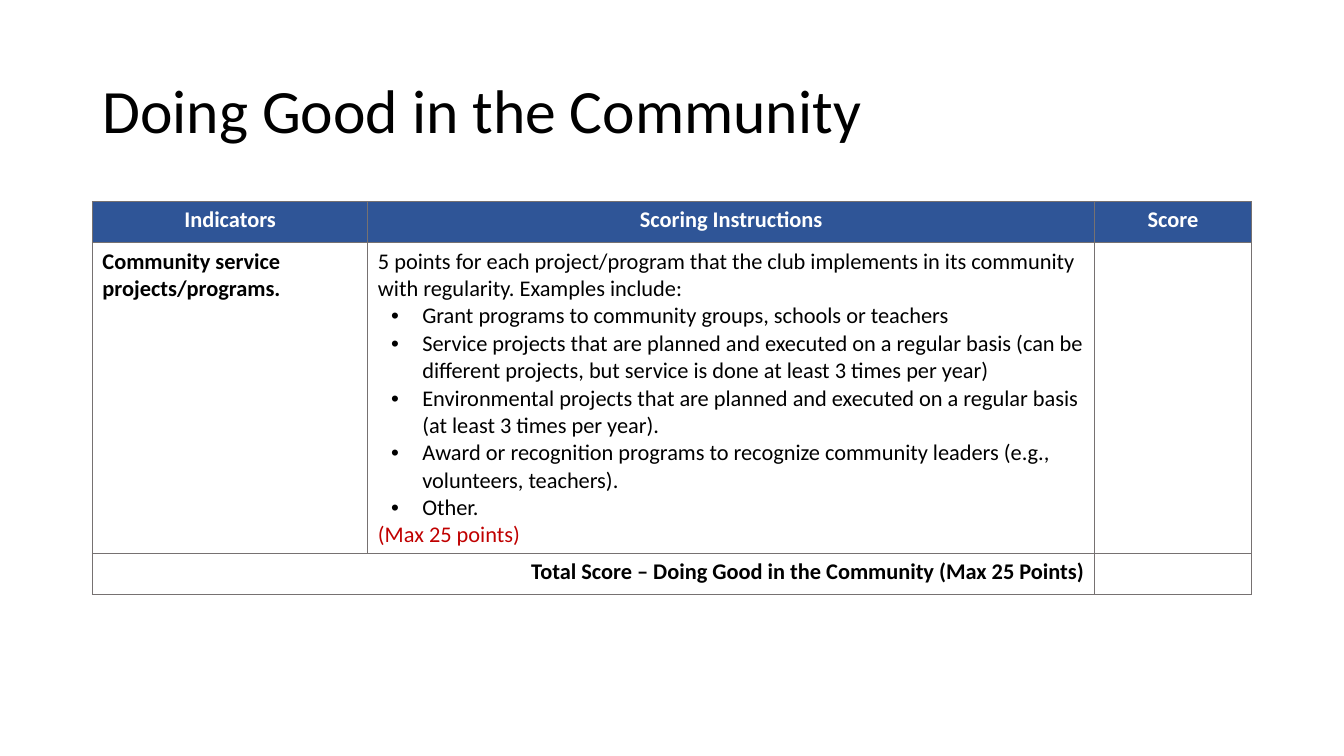
from lxml import etree
from pptx import Presentation
from pptx.dml.color import RGBColor
from pptx.enum.text import MSO_ANCHOR, PP_ALIGN
from pptx.oxml.ns import qn
from pptx.util import Inches, Pt

LEFT, CENTER, RIGHT = PP_ALIGN.LEFT, PP_ALIGN.CENTER, PP_ALIGN.RIGHT
MIDDLE = MSO_ANCHOR.MIDDLE
COLORS = {"text": "000000", "header": "2F5597", "header_text": "FFFFFF",
          "border": "767171", "limit": "C00000"}
WIDTH, HEIGHT = 13.33, 7.5
GRID_COLUMNS, GRID_ROWS = 160, 90

HEADINGS = ["Indicators", "Scoring Instructions", "Score"]
INTRODUCTION = ("5 points for each project/program that the club implements "
                "in its community with regularity. Examples include:")
EXAMPLES = [
    "Grant programs to community groups, schools or teachers",
    "Service projects that are planned and executed on a regular basis "
    "(can be different projects, but service is done at least 3 times per year)",
    "Environmental projects that are planned and executed on a regular basis "
    "(at least 3 times per year).",
    "Award or recognition programs to recognize community leaders "
    "(e.g., volunteers, teachers).",
    "Other.",
]


class SlideBuilder:
    """Holds the style and the current slide."""

    def __init__(self, presentation):
        self.font = "Calibri"
        self.slide = presentation.slides.add_slide(presentation.slide_layouts[6])

    def across(self, columns):
        return Inches(WIDTH * columns / GRID_COLUMNS)

    def down(self, rows):
        return Inches(HEIGHT * rows / GRID_ROWS)

    def set_text(self, paragraph, text, size=16, color="text", bold=False, align=LEFT):
        paragraph.text = text
        paragraph.alignment = align
        for run in paragraph.runs:
            run.font.name = self.font
            run.font.size = Pt(size)
            run.font.bold = bold
            run.font.color.rgb = RGBColor.from_string(COLORS[color])

    def title(self, text, left, top, width, height):
        shape = self.slide.shapes.add_textbox(
            self.across(left), self.down(top), self.across(width), self.down(height))
        frame = shape.text_frame
        frame.word_wrap = True
        frame.vertical_anchor = MIDDLE
        self.set_text(frame.paragraphs[0], text, size=44)
        frame.paragraphs[0].line_spacing = 0.9

    def table(self, left, top, widths, heights):
        shape = self.slide.shapes.add_table(
            len(heights), len(widths), self.across(left), self.down(top),
            self.across(sum(widths)), self.down(sum(heights)))
        table = shape.table
        for column, width in zip(table.columns, widths):
            column.width = self.across(width)
        for row, height in zip(table.rows, heights):
            row.height = self.down(height)
        for cell in table.iter_cells():
            cell.fill.background()
            self.border(cell)
        return table

    def border(self, cell):
        properties = cell._tc.get_or_add_tcPr()
        for index, side in enumerate(("lnL", "lnR", "lnT", "lnB")):
            line = etree.Element(qn(f"a:{side}"), w=str(Pt(1)))
            fill = etree.SubElement(line, qn("a:solidFill"))
            etree.SubElement(fill, qn("a:srgbClr"), val=COLORS["border"])
            properties.insert(index, line)

    def bullet(self, paragraph):
        properties = paragraph._p.get_or_add_pPr()
        properties.set("marL", str(Inches(0.44)))
        properties.set("indent", str(Inches(-0.31)))
        etree.SubElement(properties, qn("a:buFont"), typeface="Arial")
        etree.SubElement(properties, qn("a:buChar"), char="•")


def main():
    presentation = Presentation()
    presentation.slide_width = Inches(WIDTH)
    presentation.slide_height = Inches(HEIGHT)
    builder = SlideBuilder(presentation)

    # Title
    builder.title("Doing Good in the Community", 11, 4.8, 138, 17.4)

    # Table grid and heading row
    table = builder.table(11, 24, widths=[32.8, 86.5, 18.7], heights=[4.9, 37, 4.9])
    for column, heading in enumerate(HEADINGS):
        cell = table.cell(0, column)
        cell.fill.solid()
        cell.fill.fore_color.rgb = RGBColor.from_string(COLORS["header"])
        builder.set_text(cell.text_frame.paragraphs[0], heading,
                         color="header_text", bold=True, align=CENTER)

    # Indicator and its scoring instructions
    builder.set_text(table.cell(1, 0).text_frame.paragraphs[0],
                     "Community service projects/programs.", bold=True)
    instructions = table.cell(1, 1).text_frame
    builder.set_text(instructions.paragraphs[0], INTRODUCTION)
    for example in EXAMPLES:
        paragraph = instructions.add_paragraph()
        builder.set_text(paragraph, example)
        builder.bullet(paragraph)
    builder.set_text(instructions.add_paragraph(), "(Max 25 points)", color="limit")

    # Total row
    total = table.cell(2, 0)
    total.merge(table.cell(2, 1))
    builder.set_text(total.text_frame.paragraphs[0],
                     "Total Score – Doing Good in the Community (Max 25 Points)",
                     bold=True, align=RIGHT)

    presentation.save("out.pptx")


if __name__ == "__main__":
    main()
